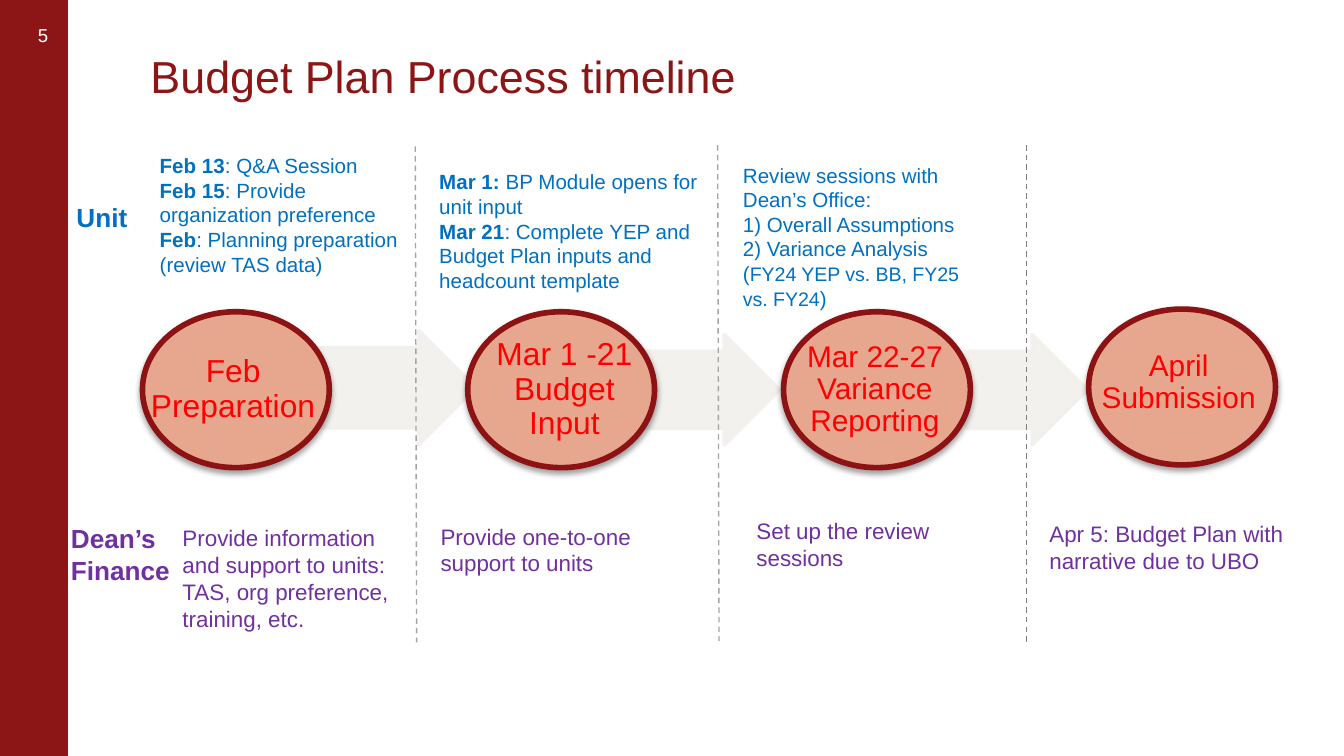
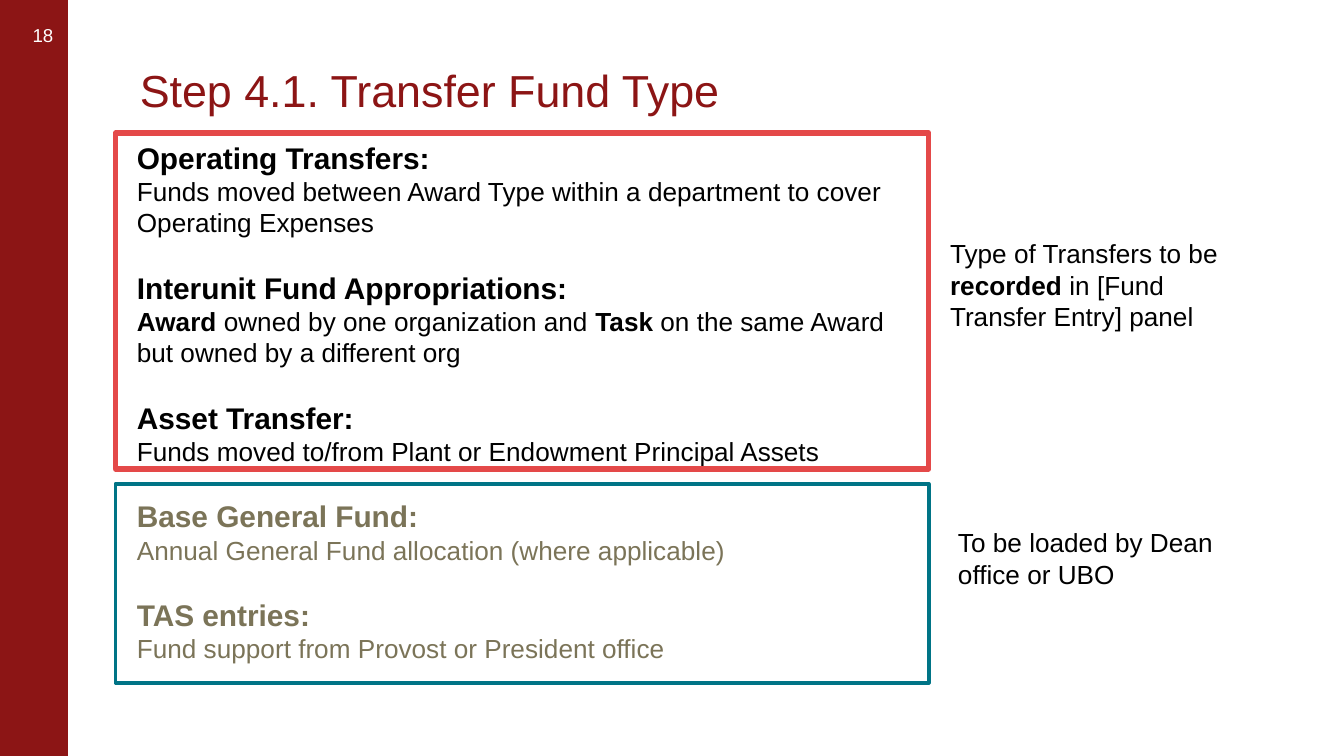
from lxml import etree
from pptx import Presentation
from pptx.dml.color import RGBColor
from pptx.enum.dml import MSO_LINE
from pptx.enum.shapes import MSO_CONNECTOR, MSO_SHAPE
from pptx.enum.text import MSO_ANCHOR, PP_ALIGN
from pptx.oxml.ns import qn
from pptx.util import Inches, Pt

FONT = "Arial"
COLORS = {
    "cardinal": "8C1515", "ring": "8C1213", "stage": "E7A78F", "stage_text": "FF0000",
    "arrow": "F1F0EC", "unit": "0070C0", "finance": "7030A0", "divider": "A5A5A5",
    "last_divider": "7F7F7F", "white": "FFFFFF", "black": "000000", "muted": "7B7458",
    "recorded": "E44949", "loaded": "007486",
}
BOX_INSETS = (0.1, 0.05, 0.1, 0.05)
LABEL_INSETS = (0.01,) * 4


def rgb(name):
    """Return the named colour."""
    return RGBColor.from_string(COLORS[name])


def add_alpha(parent, percent):
    """Set the opacity of every colour inside an element."""
    for color in parent.iter(qn("a:srgbClr")):
        etree.SubElement(color, qn("a:alpha"), val=str(percent * 1000))


def add_figure(slide, preset, at, fill, line, width):
    """Draw a preset shape, unfilled when fill is None."""
    figure = slide.shapes.add_shape(preset, *map(Inches, at))
    figure.shadow.inherit = False
    if fill:
        figure.fill.solid()
        figure.fill.fore_color.rgb = rgb(fill)
    else:
        figure.fill.background()
    figure.line.color.rgb = rgb(line)
    figure.line.width = Pt(width)
    return figure


def add_run(paragraph, text, size, color, bold=False):
    """Add one formatted run, breaking lines at newlines."""
    for index, line in enumerate(text.split("\n")):
        if index:
            paragraph.add_line_break()
        run = paragraph.add_run()
        run.text = line
        run.font.name = FONT
        run.font.size = Pt(size)
        run.font.bold = bold
        run.font.color.rgb = rgb(color)


def add_frame(slide, at, insets=BOX_INSETS, anchor=MSO_ANCHOR.TOP):
    """Place a wrapping text box and return its text frame."""
    frame = slide.shapes.add_textbox(*map(Inches, at)).text_frame
    frame.word_wrap = True
    frame.vertical_anchor = anchor
    frame.margin_left, frame.margin_top, frame.margin_right, frame.margin_bottom = map(Inches, insets)
    return frame


def next_paragraph(frame):
    """Return the empty first paragraph or a new one."""
    first = frame.paragraphs[0]
    return frame.add_paragraph() if first.runs else first


def add_text(slide, at, paragraphs, size, color, align=PP_ALIGN.LEFT, spacing=1.0, **frame_options):
    """Write paragraphs whose runs are (text, bold, optional size)."""
    frame = add_frame(slide, at, **frame_options)
    for runs in paragraphs:
        paragraph = next_paragraph(frame)
        paragraph.alignment = align
        paragraph.line_spacing = spacing
        for text, bold, *run_size in runs:
            add_run(paragraph, text, run_size[0] if run_size else size, color, bold)


def add_base(prs, number, title, title_at):
    """Add a slide with the side band, slide number and title."""
    slide = prs.slides.add_slide(prs.slide_layouts[6])
    add_figure(slide, MSO_SHAPE.RECTANGLE, (0, 0, 0.5, 5.63), "cardinal", "cardinal", 0.75)
    add_text(slide, (0.07, 0.01, 0.5, 0.5), [[(number, False)]], 10, "white", PP_ALIGN.CENTER,
             insets=(0.05, 0, 0.05, 0), anchor=MSO_ANCHOR.MIDDLE)
    add_text(slide, title_at, [[(title, False)]], 24, "cardinal", spacing=0.85,
             insets=(0, 0.05, 0.1, 0.05), anchor=MSO_ANCHOR.BOTTOM)
    return slide


def add_flow_arrow(slide, at):
    """Draw a pale arrow between two stages."""
    arrow = add_figure(slide, MSO_SHAPE.RIGHT_ARROW, at, "arrow", "arrow", 2)
    arrow.adjustments[0] = 0.7
    arrow.adjustments[1] = 0.5
    add_alpha(arrow._element.spPr, 89)


def add_stage(slide, left, top, label_at, lines, size):
    """Draw a shadowed stage ellipse with its label."""
    ellipse = add_figure(slide, MSO_SHAPE.OVAL, (left, top, 1.39, 1.16), "stage", "ring", 3)
    effects = ellipse._element.spPr.find(qn("a:effectLst"))
    shadow = etree.SubElement(effects, qn("a:outerShdw"), blurRad=str(Pt(3.1)), dist=str(Pt(1.6)),
                              dir="5400000", rotWithShape="0")
    etree.SubElement(shadow, qn("a:srgbClr"), val=COLORS["black"])
    add_alpha(shadow, 37)
    add_text(slide, label_at, [[(line, False)] for line in lines], size, "stage_text",
             PP_ALIGN.CENTER, 0.9, insets=LABEL_INSETS, anchor=MSO_ANCHOR.MIDDLE)


def add_divider(slide, start, end, color):
    """Draw a dashed line between two columns."""
    divider = slide.shapes.add_connector(MSO_CONNECTOR.STRAIGHT, *map(Inches, start + end))
    divider.line.color.rgb = rgb(color)
    divider.line.width = Pt(0.75)
    divider.line.dash_style = MSO_LINE.DASH
    etree.SubElement(divider._element.spPr, qn("a:effectLst"))


def add_fund_types(slide, at, fund_types):
    """List fund types as bold headings over descriptions."""
    frame = add_frame(slide, at)
    for index, (heading, description, color) in enumerate(fund_types):
        paragraph = next_paragraph(frame)
        if index:
            paragraph.space_before = Pt(16.8)
        add_run(paragraph, heading, 16, color, True)
        paragraph = next_paragraph(frame)
        for text, bold in description:
            add_run(paragraph, text, 14, color, bold)


def build_timeline(prs):
    """Build the timeline slide."""
    slide = add_base(prs, "5", "Budget Plan Process timeline", (1.12, 0.28, 8.43, 0.53))
    for at in ((2.27, 2.46, 1.27, 0.85), (4.6, 2.49, 1.2, 0.82), (7.19, 2.49, 0.9, 0.82)):
        add_flow_arrow(slide, at)
    stages = [
        (1.06, 2.32, (1.08, 2.49, 1.31, 0.82), ["Feb Preparation"], 17),
        (3.48, 2.32, (3.65, 2.49, 1.1, 0.82), ["Mar 1 -21", "Budget Input"], 17),
        (5.83, 2.32, (5.94, 2.49, 1.14, 0.82), ["Mar 22-27\nVariance Reporting"], 16),
        (8.1, 2.3, (8.18, 2.44, 1.18, 0.82), ["April", "Submission"], 16),
    ]
    for stage in stages:
        add_stage(slide, *stage)
    dividers = [
        ((3.09, 1.09), (3.1, 4.78), "divider"),
        ((5.34, 1.08), (5.35, 4.77), "divider"),
        ((7.64, 1.08), (7.64, 4.8), "last_divider"),
    ]
    for divider in dividers:
        add_divider(slide, *divider)

    add_text(slide, (0.47, 1.45, 0.65, 0.34), [[("Unit", True)]], 14, "unit")
    add_text(slide, (0.43, 3.84, 0.97, 0.57), [[("Dean’s Finance", True)]], 14, "finance")
    unit_tasks = [
        ((1.09, 1.09, 2.06, 1.03), [
            [("Feb 13", True), (": Q&A Session", False)],
            [("Feb 15", True), (": Provide organization preference", False)],
            [("Feb", True), (": Planning preparation (review TAS data)", False)],
        ]),
        ((3.17, 1.21, 2.17, 1.03), [
            [("Mar 1: ", True), ("BP Module opens for unit input", False)],
            [("Mar 21", True),
             (": Complete YEP and Budget Plan inputs and headcount template", False)],
        ]),
        ((5.43, 1.16, 1.93, 1.21), [
            [("Review sessions with Dean’s Office:", False)],
            [("1) Overall Assumptions", False)],
            [("2) Variance Analysis (", False),
             ("FY24 YEP vs. BB, FY25 vs. FY24", False, 10.5), (")", False)],
        ]),
    ]
    for at, paragraphs in unit_tasks:
        add_text(slide, at, paragraphs, 11, "unit")
    finance_tasks = [
        ((1.26, 3.85, 1.93, 0.91),
         "Provide information and support to units: TAS, org preference, training, etc."),
        ((3.18, 3.84, 1.93, 0.5), "Provide one-to-one support to units"),
        ((5.53, 3.8, 1.82, 0.5), "Set up the review sessions"),
        ((7.71, 3.82, 2.23, 0.5), "Apr 5: Budget Plan with narrative due to UBO"),
    ]
    for at, task in finance_tasks:
        add_text(slide, at, [[(task, False)]], 12, "finance")


def build_fund_types(prs):
    """Build the transfer fund type slide."""
    slide = add_base(prs, "18", "Step 4.1. Transfer Fund Type", (1.04, 0.39, 6.89, 0.53))
    add_fund_types(slide, (0.92, 0.99, 6.05, 4.27), [
        ("Operating Transfers:",
         [("Funds moved between Award Type within a department to cover Operating Expenses", False)],
         "black"),
        ("Interunit Fund Appropriations:",
         [("Award", True), (" owned by one organization and ", False), ("Task", True),
          (" on the same Award but owned by a different org", False)], "black"),
        ("Asset Transfer:",
         [("Funds moved to/from Plant or Endowment Principal Assets", False)], "black"),
        ("Base General Fund:",
         [("Annual General Fund allocation (where applicable)", False)], "muted"),
        ("TAS entries:", [("Fund support from Provost or President office", False)], "muted"),
    ])
    add_figure(slide, MSO_SHAPE.RECTANGLE, (0.86, 0.99, 6.05, 2.5), None, "recorded", 3)
    add_figure(slide, MSO_SHAPE.RECTANGLE, (0.86, 3.6, 6.05, 1.48), None, "loaded", 2)
    add_text(slide, (6.97, 1.72, 2.55, 0.81),
             [[("Type of Transfers to be ", False), ("recorded", True),
               (" in [Fund Transfer Entry] panel", False)]], 14, "black")
    add_text(slide, (7.03, 3.87, 2.56, 0.57),
             [[("To be loaded by Dean office or UBO", False)]], 14, "black")


def main():
    """Build and save the presentation."""
    prs = Presentation()
    prs.slide_width = Inches(10)
    prs.slide_height = Inches(10 * 9 / 16)
    build_timeline(prs)
    build_fund_types(prs)
    prs.save("out.pptx")


if __name__ == "__main__":
    main()
